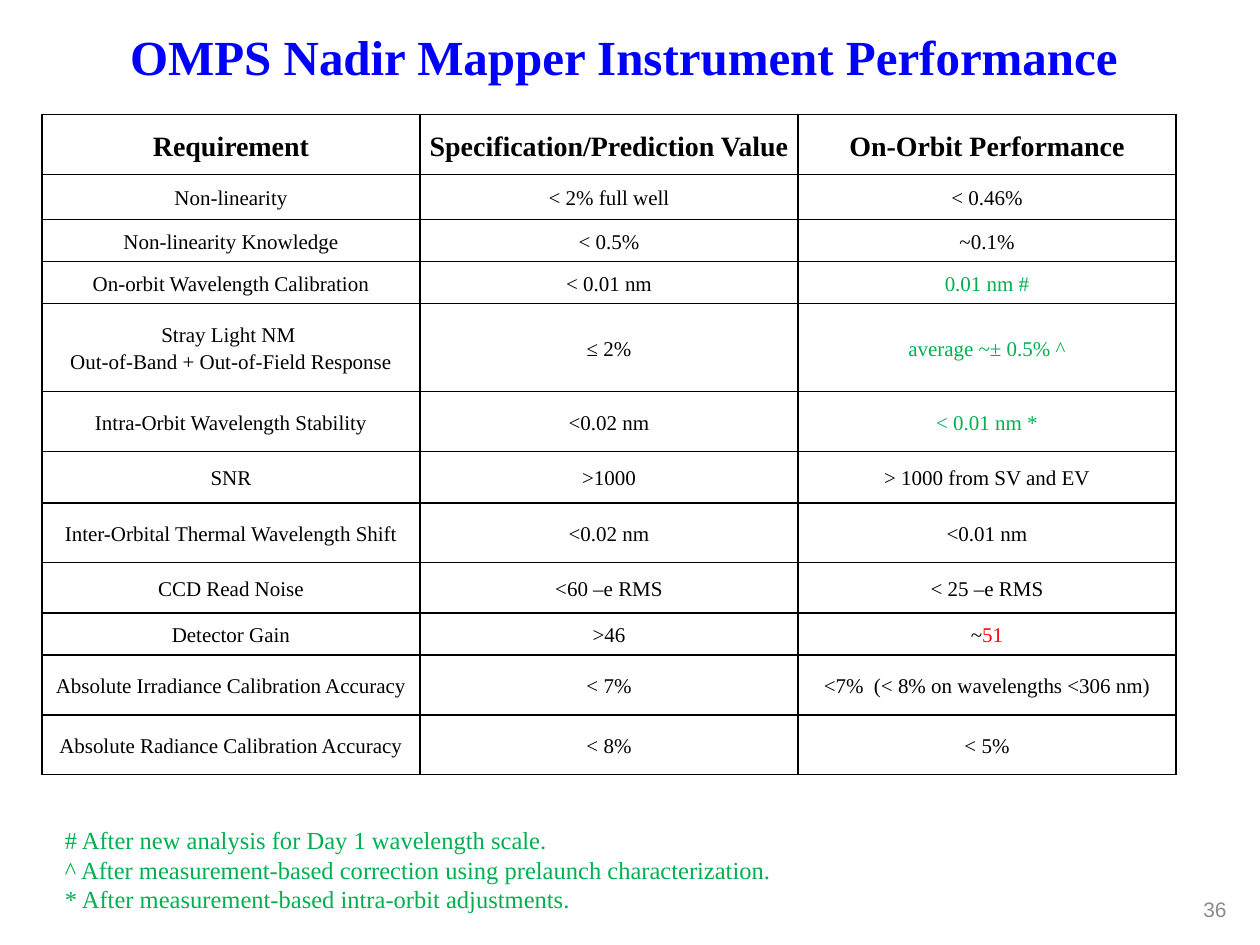
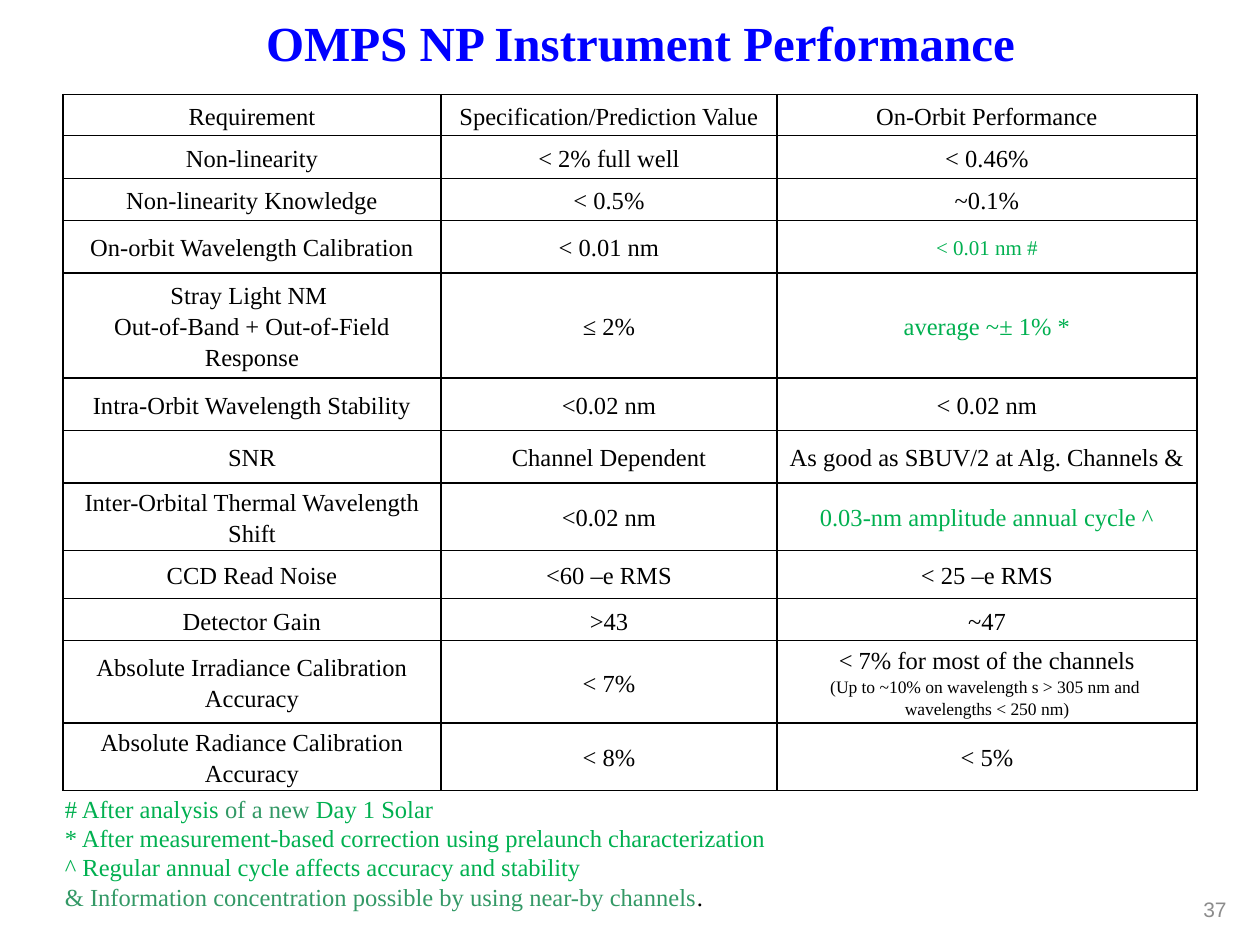
"""Build two slides that compare instrument requirements with on-orbit performance."""
from lxml.etree import SubElement
from pptx import Presentation
from pptx.dml.color import RGBColor
from pptx.enum.text import MSO_ANCHOR as ANCHOR, PP_ALIGN as ALIGN
from pptx.oxml.ns import qn
from pptx.util import Inches, Pt

COLORS = {"blue": "0000FF", "black": "000000", "green": "00B050",
          "sea": "339966", "red": "FF0000", "gray": "8C8C8C"}
SERIF = {"name": "Times New Roman", "color": "black", "size": Pt(12), "bold": False}
TITLE = {**SERIF, "color": "blue", "size": Pt(28), "bold": True}
NOTE = {**SERIF, "color": "green", "size": Pt(14)}
NUMBER = {**SERIF, "name": "Arial", "color": "gray"}
GREEN, SEA, RED, BLACK = ({"color": c} for c in ("green", "sea", "red", "black"))
CELL = {"alignment": ALIGN.CENTER, "line_spacing": 1.15}
HEAD = {**CELL, "space_after": Pt(10)}

prs = Presentation()
prs.slide_width, prs.slide_height = Inches(10), Inches(7.5)
UNIT = prs.slide_width / 120


def write(tf, paragraphs, font, layout):
    """Fill a text frame; a paragraph is a string or a list of (text, changes) runs."""
    for i, runs in enumerate(paragraphs):
        p = tf.paragraphs[0] if i == 0 else tf.add_paragraph()
        for key, value in layout.items():
            setattr(p, key, value)
        for text, changes in [(runs, {})] if isinstance(runs, str) else runs:
            r = p.add_run()
            r.text = text
            for key, value in {**font, **changes}.items():
                if key == "color":
                    r.font.color.rgb = RGBColor.from_string(COLORS[value])
                else:
                    setattr(r.font, key, value)


def add_text(s, box, paragraphs, font, align=ALIGN.LEFT, anchor=ANCHOR.TOP):
    """Add a wrapped text box placed on the 120-column grid."""
    tf = s.shapes.add_textbox(*(round(n * UNIT) for n in box)).text_frame
    tf.word_wrap, tf.vertical_anchor = True, anchor
    write(tf, paragraphs, font, {"alignment": align})


HEADINGS = ["Requirement", "Specification/Prediction Value", "On-Orbit Performance"]
REQUIREMENTS = [
    ("Non-linearity", "< 2% full well"),
    ("Non-linearity Knowledge", "< 0.5%"),
    ("On-orbit Wavelength Calibration", "< 0.01 nm"),
    ("Stray Light NM \nOut-of-Band + Out-of-Field Response", "≤ 2%"),
    ("Intra-Orbit Wavelength Stability", "<0.02 nm"),
    ("SNR", None),
    ("Inter-Orbital Thermal Wavelength Shift", "<0.02 nm"),
    ("CCD Read Noise", "<60 –e RMS"),
    ("Detector Gain", None),
    ("Absolute Irradiance Calibration Accuracy", "< 7%"),
    ("Absolute Radiance Calibration Accuracy", "< 8%"),
]

SLIDES = [
    {
        "number": "36",
        "title": "OMPS Nadir Mapper Instrument Performance ",
        "title_box": (6, 1.6, 108, 7.4),
        "table_at": (4, 10.9),
        "columns": [36, 36, 36],
        "rows": [5.7, 4.3, 4, 4, 8.4, 5.7, 4.9, 5.7, 4.8, 4, 5.7, 5.7],
        "head_font": {**SERIF, "size": Pt(16), "bold": True},
        "body_font": SERIF,
        "specs": {"SNR": ">1000", "Detector Gain": ">46"},
        "performance": [
            "< 0.46%", "~0.1%", [[("0.01 nm #", GREEN)]],
            [[("average ~± 0.5% ^", GREEN)]], [[("< 0.01 nm *", GREEN)]],
            "> 1000 from SV and EV", "<0.01 nm", "< 25 –e RMS",
            [[("~", {}), ("51", RED)]],
            "<7%  (< 8% on wavelengths <306 nm)", "< 5%",
        ],
        "notes_box": (5, 78, 78, 9),
        "notes": [
            "# After new analysis for Day 1 wavelength scale.",
            "^ After measurement-based correction using prelaunch characterization.",
            "* After measurement-based intra-orbit adjustments.",
        ],
    },
    {
        "number": "37",
        "title": "OMPS NP Instrument Performance",
        "title_box": (7, 1, 108, 6),
        "table_at": (6, 9),
        "columns": [36, 32, 40],
        "rows": [3.9, 4.1, 4, 5, 10, 5, 5, 5, 4.6, 4, 5, 5],
        "head_font": {**SERIF, "size": Pt(14)},
        "body_font": {**SERIF, "size": Pt(14)},
        "specs": {"SNR": "Channel Dependent", "Detector Gain": ">43"},
        "performance": [
            "< 0.46%", "~0.1%", [[("< 0.01 nm #", {**GREEN, "size": Pt(12)})]],
            [[("average ~± 1% *", GREEN)]], "< 0.02 nm",
            "As good as SBUV/2 at Alg. Channels &",
            [[("0.03-nm amplitude annual cycle ^", GREEN)]], "< 25 –e RMS", "~47",
            ["< 7% for most of the channels",
             [("(Up to ~10% on wavelength s > 305 nm and  wavelengths < 250 nm)",
               {"size": Pt(10)})]],
            "< 5%",
        ],
        "notes_box": (5, 75, 99.4, 13),
        "notes": [
            [("# After analysis ", {}), ("of a new ", SEA), ("Day 1 Solar", {})],
            "* After measurement-based correction using prelaunch characterization",
            "^ Regular annual cycle affects accuracy and stability",
            [("& Information concentration possible by using near-by channels", SEA),
             (".", BLACK)],
        ],
    },
]

for data in SLIDES:
    s = prs.slides.add_slide(prs.slide_layouts[6])
    add_text(s, data["title_box"], [data["title"]], TITLE, ALIGN.CENTER, ANCHOR.MIDDLE)

    body = [(name, spec or data["specs"][name], result)
            for (name, spec), result in zip(REQUIREMENTS, data["performance"])]
    box = (*data["table_at"], sum(data["columns"]), sum(data["rows"]))
    table = s.shapes.add_table(len(data["rows"]), len(data["columns"]),
                               *(round(n * UNIT) for n in box)).table
    table.first_row = table.horz_banding = False
    for column, width in zip(table.columns, data["columns"]):
        column.width = round(width * UNIT)
    for row, height in zip(table.rows, data["rows"]):
        row.height = round(height * UNIT)

    for i, values in enumerate([HEADINGS, *body]):
        font, layout = (data["body_font"], CELL) if i else (data["head_font"], HEAD)
        for cell, value in zip(table.rows[i].cells, values):
            cell.margin_left = cell.margin_right = Inches(0.07)
            cell.margin_top = cell.margin_bottom = 0
            cell.vertical_anchor = ANCHOR.MIDDLE
            paragraphs = value.split("\n") if isinstance(value, str) else value
            write(cell.text_frame, paragraphs, font, layout)
            for side in ("lnL", "lnR", "lnT", "lnB"):
                line = SubElement(cell._tc.get_or_add_tcPr(), qn(f"a:{side}"), w=str(Pt(1)))
                fill = SubElement(line, qn("a:solidFill"))
                SubElement(fill, qn("a:srgbClr"), val=COLORS["black"])
            cell.fill.background()

    add_text(s, data["notes_box"], data["notes"], NOTE)
    add_text(s, (90, 84.2, 28, 4.8), [data["number"]], NUMBER, ALIGN.RIGHT, ANCHOR.MIDDLE)

prs.save("out.pptx")
